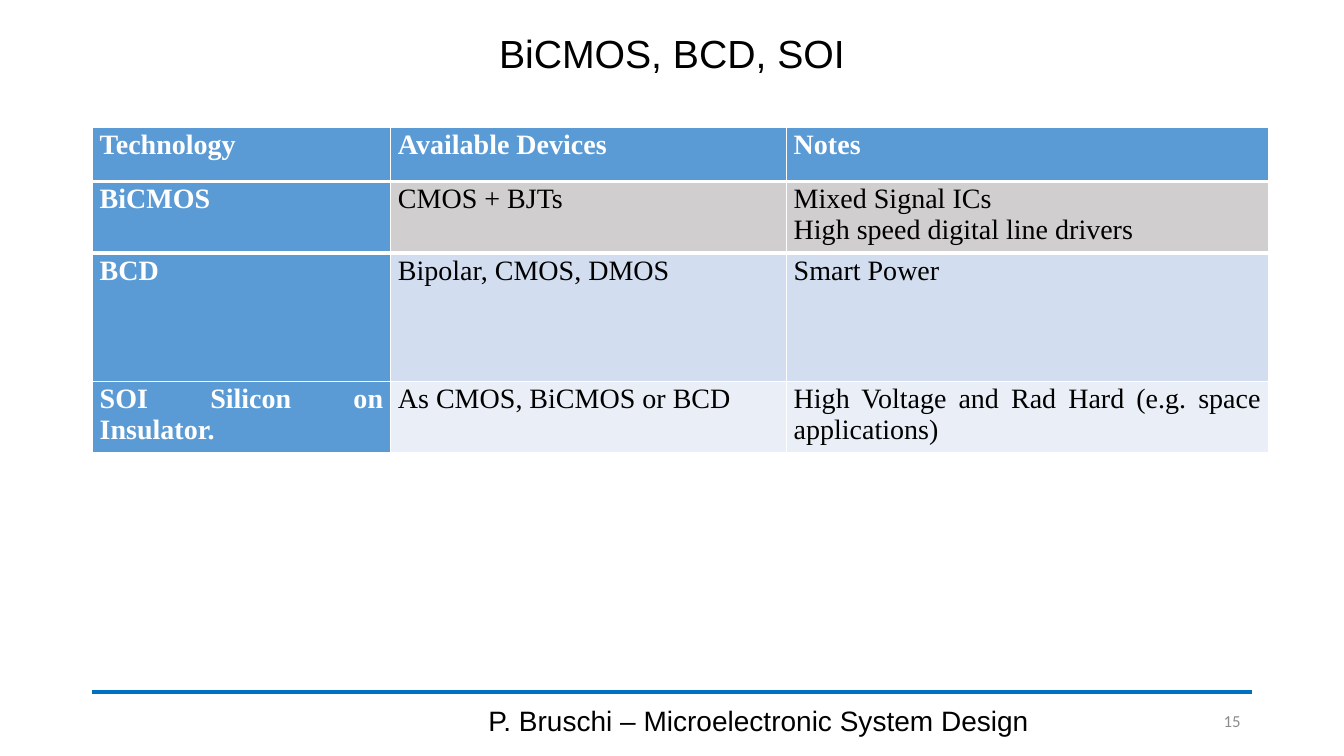
from lxml import etree
from pptx import Presentation
from pptx.dml.color import RGBColor
from pptx.enum.shapes import MSO_CONNECTOR
from pptx.enum.text import MSO_ANCHOR, PP_ALIGN
from pptx.oxml.ns import qn
from pptx.util import Pt

PX = 9525
STRAIGHT = MSO_CONNECTOR.STRAIGHT
MIDDLE = MSO_ANCHOR.MIDDLE
CENTER, RIGHT, JUSTIFY = PP_ALIGN.CENTER, PP_ALIGN.RIGHT, PP_ALIGN.JUSTIFY
COLORS = {
    "black": "000000", "white": "FFFFFF", "rule": "0070C0", "number": "8C8C8C",
    "head": "5B9BD5", "gray": "D0CECE", "blue": "D2DEEF", "pale": "EAEFF7",
}
LEFT = 88
COLUMNS = (284, 377, 459)
MARGINS = {"margin_left": 7, "margin_right": 7, "margin_top": 2, "margin_bottom": 2}
HEADER = [(52, "head", 3, ("Technology", "Available Devices", "Notes"))]
BODY = [
    (63, "gray", 3, ("BiCMOS", "CMOS + BJTs",
                     "Mixed Signal ICs\nHigh speed digital line drivers")),
    (122, "blue", 1, ("BCD", "Bipolar, CMOS, DMOS", "Smart Power")),
    (63, "pale", 1, ("SOI Silicon on Insulator.", "As CMOS, BiCMOS or BCD",
                     "High Voltage and Rad Hard (e.g. space applications)")),
]


def rgb(name):
    """Return the named colour."""
    return RGBColor.from_string(COLORS[name])


def fill_text(tf, text, align, color, spacing=None, **font):
    """Write each line of text as a formatted paragraph."""
    for i, line in enumerate(text.split("\n")):
        p = tf.add_paragraph() if i else tf.paragraphs[0]
        p.alignment = align
        p.line_spacing = spacing
        r = p.add_run()
        r.text = line
        r.font.color.rgb = rgb(color)
        for name, value in font.items():
            setattr(r.font, name, value)


def add_text(s, box, text, align, color, **font):
    """Add a vertically centred text box."""
    tf = s.shapes.add_textbox(*(v * PX for v in box)).text_frame
    tf.word_wrap = True
    tf.vertical_anchor = MIDDLE
    fill_text(tf, text, align, color, **font)


def add_rule(s, x1, x2, y):
    """Add the horizontal footer rule."""
    line = s.shapes.add_connector(STRAIGHT, x1 * PX, y * PX, x2 * PX, y * PX)
    line.line.color.rgb = rgb("rule")
    line.line.width = Pt(2.75)
    etree.SubElement(line._element.spPr, qn("a:effectLst"))


def set_borders(cell, widths):
    """Draw white borders given as a dict of side to points."""
    tc_pr = cell._tc.get_or_add_tcPr()
    for i, (side, width) in enumerate(widths.items()):
        ln = etree.Element(qn(f"a:ln{side}"), w=str(Pt(width)))
        solid = etree.SubElement(ln, qn("a:solidFill"))
        etree.SubElement(solid, qn("a:srgbClr"), val=COLORS["white"])
        tc_pr.insert(i, ln)


def add_grid(s, top, rows):
    """Add a table whose first column is styled as headings."""
    height = sum(row[0] for row in rows)
    table = s.shapes.add_table(len(rows), len(COLUMNS), LEFT * PX, top * PX,
                               sum(COLUMNS) * PX, height * PX).table
    table.first_row = table.horz_banding = False
    for col, width in zip(table.columns, COLUMNS):
        col.width = width * PX
    above = 1
    for row, (height, shade, below, texts) in zip(table.rows, rows):
        row.height = height * PX
        for j, (cell, text) in enumerate(zip(row.cells, texts)):
            fill = shade if j else "head"
            heading = fill == "head"
            for name, value in MARGINS.items():
                setattr(cell, name, value * PX)
            cell.fill.solid()
            cell.fill.fore_color.rgb = rgb(fill)
            set_borders(cell, {"L": 1, "R": 1, "T": above, "B": below})
            fill_text(cell.text_frame, text, JUSTIFY, "white" if heading else "black",
                      name="Times New Roman", size=Pt(20), bold=heading)
        above = below


def main():
    """Build the slide and save it."""
    prs = Presentation()
    prs.slide_width, prs.slide_height = 1280 * PX, 720 * PX
    s = prs.slides.add_slide(prs.slide_layouts[6])
    add_rule(s, LEFT, 1192, 659)
    add_text(s, (LEFT, 19, 1104, 69), "BiCMOS, BCD, SOI", CENTER, "black",
             spacing=0.9, name="Arial", size=Pt(28))
    add_text(s, (424, 667, 597, 38), "P. Bruschi – Microelectronic System Design",
             CENTER, "black", name="Arial", size=Pt(20))
    add_text(s, (1099, 667, 92, 38), "15", RIGHT, "number",
             name="Calibri", size=Pt(12))
    add_grid(s, 173, BODY)
    add_grid(s, 121, HEADER)
    prs.save("out.pptx")


if __name__ == "__main__":
    main()
